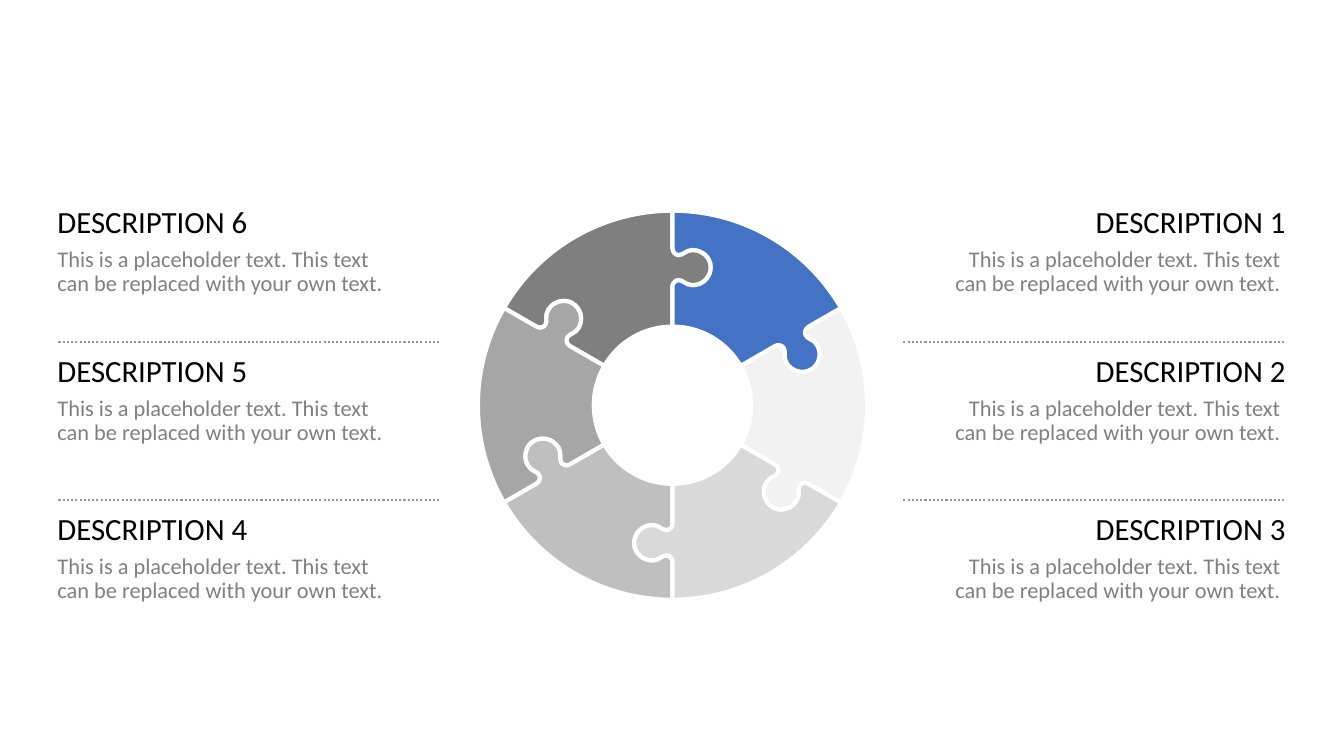
import copy
import math

import pptx
import pptx.dml.color
import pptx.enum.dml
import pptx.enum.shapes
import pptx.enum.text
import pptx.oxml
import pptx.oxml.ns
import pptx.util

Inches = pptx.util.Inches
Pt = pptx.util.Pt
ALIGN = pptx.enum.text.PP_ALIGN

PIECE_COLORS = ["4472C4", "F2F2F2", "D9D9D9", "BFBFBF", "A6A6A6", "7F7F7F"]
PIECE_ANGLE = 360 / len(PIECE_COLORS)
OUTER_RADIUS, INNER_RADIUS = 1.93, 0.78
JOINT = [
    (0, 1.56), (0, 1.52), (0.03, 1.49), (0.06, 1.49),
    (0.11, 1.49), (0.13, 1.54), (0.20, 1.54),
    (0.30, 1.54), (0.38, 1.46), (0.38, 1.37),
    (0.38, 1.27), (0.30, 1.19), (0.20, 1.19),
    (0.13, 1.19), (0.11, 1.24), (0.06, 1.24),
    (0.03, 1.24), (0, 1.21), (0, 1.18),
]
BODY = "This is a placeholder text. This text \vcan be replaced with your own text."
ROW_TOPS = [2.01, 3.49, 5.06]
DIVIDER_TOPS = [1.38, 2.95]


def rgb(hex_color):
    """Return the colour for a hex string."""
    return pptx.dml.color.RGBColor.from_string(hex_color)


def apply_format(target, formats):
    """Set each named attribute on the target."""
    for name, value in formats.items():
        setattr(target, name, value)


def turn(point, degrees):
    """Turn a (tangent, radius) point clockwise into x and y offsets."""
    tangent, radius = point
    angle = math.radians(degrees)
    return (
        tangent * math.cos(angle) + radius * math.sin(angle),
        tangent * math.sin(angle) - radius * math.cos(angle),
    )


def arc(radius, start, end):
    """Return Bezier points of an arc in two halves, without its first point."""
    middle = (start + end) / 2
    handle = radius * 4 / 3 * math.tan(math.radians(end - start) / 8)
    points = []
    for first, last in ((start, middle), (middle, end)):
        points += [
            turn((handle, radius), first), turn((-handle, radius), last), turn((0, radius), last),
        ]
    return points


def piece_outline(start):
    """Return outline points and the indexes that are ends of straight lines."""
    end = start + PIECE_ANGLE
    inward = [turn(point, start) for point in JOINT]
    outward = [turn(point, end) for point in reversed(JOINT)]
    points = [turn((0, OUTER_RADIUS), start)]
    straight = set()
    for joint, rim, bend in (
        (inward, turn((0, INNER_RADIUS), start), arc(INNER_RADIUS, start, end)),
        (outward, turn((0, OUTER_RADIUS), end), arc(OUTER_RADIUS, end, start)),
    ):
        straight.update((len(points), len(points) + len(joint)))
        points += [*joint, rim, *bend]
    return points, straight


def bend_segments(piece, straight):
    """Join each three points that are not straight into a Bezier curve."""
    qn = pptx.oxml.ns.qn
    curve = None
    for index, segment in enumerate(list(piece._element.iter(qn("a:lnTo"))), start=1):
        if index in straight:
            continue
        if curve is None or len(curve) == 3:
            curve = pptx.oxml.parse_xml(f"<a:cubicBezTo {pptx.oxml.ns.nsdecls('a')}/>")
            segment.addprevious(curve)
        curve.append(segment[0])
        segment.getparent().remove(segment)


def add_puzzle_ring(slide, left, top, size):
    """Draw the ring of interlocking pieces in a square box."""
    center_x, center_y = left + size / 2, top + size / 2
    for index, color in reversed(list(enumerate(PIECE_COLORS))):
        points, straight = piece_outline(index * PIECE_ANGLE)
        outline = [(Inches(center_x + x), Inches(center_y + y)) for x, y in points]
        builder = slide.shapes.build_freeform(*outline[0])
        builder.add_line_segments(outline[1:], close=False)
        piece = builder.convert_to_shape()
        bend_segments(piece, straight)
        piece.shadow.inherit = False
        piece.fill.solid()
        piece.fill.fore_color.rgb = rgb(color)
        piece.line.color.rgb = rgb("FFFFFF")
        piece.line.width = Pt(3)


def add_description(slide, left, top, width, height, number, align):
    """Add one heading with its body text."""
    box = slide.shapes.add_textbox(Inches(left), Inches(top), Inches(width), Inches(height))
    frame = box.text_frame
    margins = {f"margin_{side}": 0 for side in ("left", "top", "right", "bottom")}
    apply_format(frame, {
        **margins,
        "word_wrap": True,
        "auto_size": pptx.enum.text.MSO_AUTO_SIZE.SHAPE_TO_FIT_TEXT,
    })
    body = BODY + (" " if align == ALIGN.RIGHT else "")
    rows = [(f"DESCRIPTION {number}", 22, "000000", 1.0), (body, 16, "808080", 0.9)]
    for index, (text, size, color, spacing) in enumerate(rows):
        paragraph = frame.add_paragraph() if index else frame.paragraphs[0]
        paragraph.text = text
        apply_format(paragraph, {
            "alignment": align, "space_after": Pt(6), "line_spacing": spacing,
        })
        for run in paragraph.runs:
            apply_format(run.font, {"size": Pt(size), "name": "Calibri"})
            run.font.color.rgb = rgb(color)
        for line_break in paragraph._p.findall(pptx.oxml.ns.qn("a:br")):
            line_break.append(copy.deepcopy(paragraph.runs[0]._r.rPr))


def add_divider(slide, left, top, width):
    """Draw a dotted horizontal divider."""
    divider = slide.shapes.add_connector(
        pptx.enum.shapes.MSO_CONNECTOR.STRAIGHT,
        Inches(left), Inches(top), Inches(left + width), Inches(top),
    )
    divider.line.color.rgb = rgb("969696")
    apply_format(divider.line, {
        "width": Pt(1.5), "dash_style": pptx.enum.dml.MSO_LINE.ROUND_DOT,
    })
    divider._element.spPr.append(pptx.oxml.parse_xml(
        f"<a:effectLst {pptx.oxml.ns.nsdecls('a')}/>"
    ))


def add_column(slide, left, top, width, numbers, align):
    """Place three descriptions and two dividers in a column."""
    text_width = 3.56
    text_left = left + width - text_width if align == ALIGN.RIGHT else left
    for number, row_top in zip(numbers, ROW_TOPS):
        add_description(
            slide, text_left, top + row_top - ROW_TOPS[0], text_width, 0.94, number, align
        )
    for divider_top in DIVIDER_TOPS:
        add_divider(slide, left + 0.01, top + divider_top, width - 0.02)


def main():
    """Build and save the slide."""
    deck = pptx.Presentation()
    apply_format(deck, {"slide_width": Inches(13.33), "slide_height": Inches(7.5)})
    slide = deck.slides.add_slide(deck.slide_layouts[6])
    add_puzzle_ring(slide, 4.74, 2.09, 2 * OUTER_RADIUS)
    add_column(slide, 0.57, ROW_TOPS[0], 3.8, (6, 5, 4), ALIGN.LEFT)
    add_column(slide, 8.95, ROW_TOPS[0], 3.8, (1, 2, 3), ALIGN.RIGHT)
    deck.save("out.pptx")


if __name__ == "__main__":
    main()
